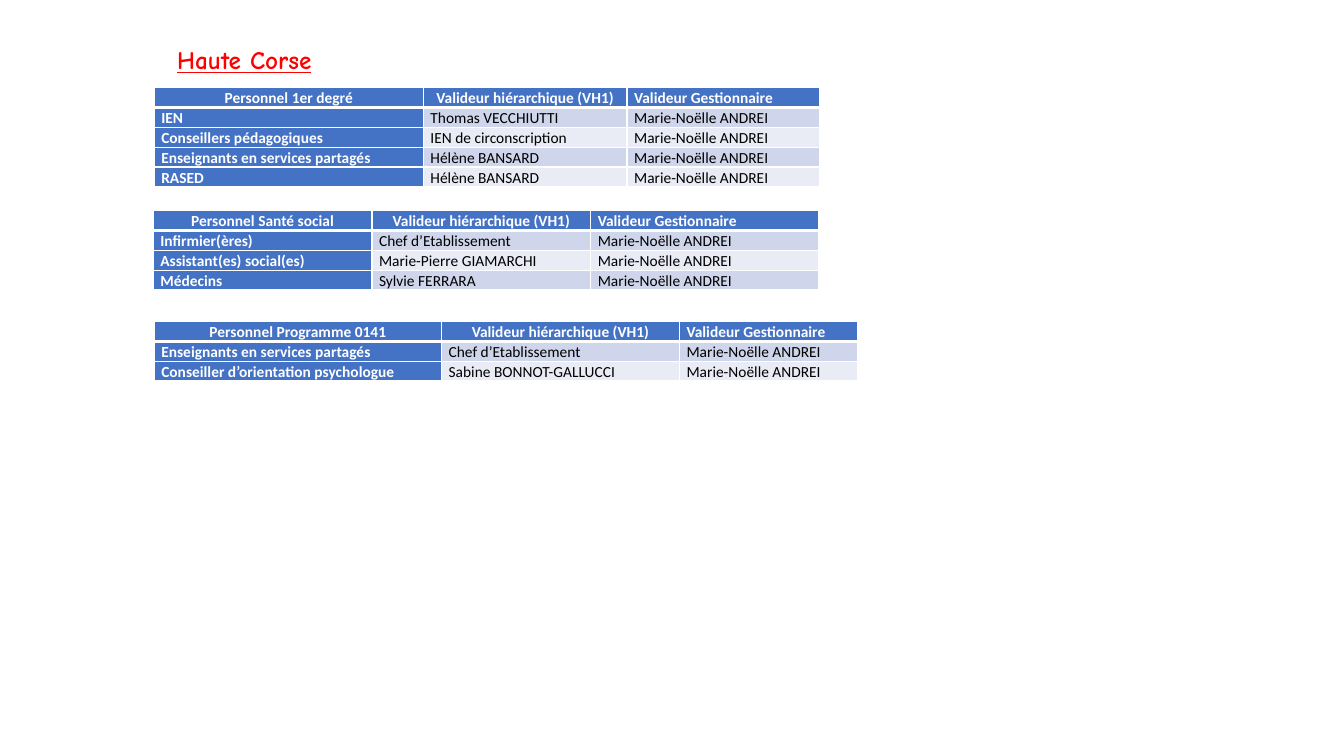
from lxml import etree
from pptx import Presentation
from pptx.dml.color import RGBColor
from pptx.enum.text import PP_ALIGN
from pptx.oxml.ns import qn
from pptx.util import Inches, Pt

CENTER, LEFT = PP_ALIGN.CENTER, PP_ALIGN.LEFT
BLUE, WHITE, BLACK, RED = "4472C4", "FFFFFF", "000000", "FF0000"
BANDS = ("CFD5EA", "E9EBF5")
ROW_HEIGHT = 0.19
LINE_SPACING = 1.07
MANAGER = "Marie-Noëlle ANDREI"

# left, top, column widths, first heading, rows of (staff, approver)
STAFF_TABLES = [
    (1.53, 0.87, (2.67, 2.02, 1.91), "Personnel 1er degré", [
        ("IEN", "Thomas VECCHIUTTI"),
        ("Conseillers pédagogiques", "IEN de circonscription"),
        ("Enseignants en services partagés", "Hélène BANSARD"),
        ("RASED", "Hélène BANSARD"),
    ]),
    (1.52, 2.09, (2.17, 2.17, 2.26), "Personnel Santé social", [
        ("Infirmier(ères)", "Chef d’Etablissement"),
        ("Assistant(es) social(es)", "Marie-Pierre GIAMARCHI"),
        ("Médecins", "Sylvie FERRARA"),
    ]),
    (1.53, 3.19, (2.85, 2.36, 1.77), "Personnel Programme 0141", [
        ("Enseignants en services partagés", "Chef d’Etablissement"),
        ("Conseiller d’orientation psychologue", "Sabine BONNOT-GALLUCCI"),
    ]),
]


def color(value):
    return RGBColor.from_string(value)


def set_font(para, name, size, value, bold, underline=False):
    font = para.font
    font.name, font.size = name, Pt(size)
    font.bold, font.underline = bold, underline
    font.color.rgb = color(value)


def set_borders(cell, widths):
    """Draw white cell borders; widths maps L, R, T and B to points, in that order."""
    properties = cell._tc.get_or_add_tcPr()
    for side, width in widths.items():
        line = etree.SubElement(properties, qn(f"a:ln{side}"), w=str(Pt(width)))
        fill = etree.SubElement(line, qn("a:solidFill"))
        etree.SubElement(fill, qn("a:srgbClr"), val=WHITE)


def fill_cell(cell, text, row, column):
    heading = row == 0
    strong = heading or column == 0
    set_borders(cell, {"L": 1, "R": 1, "T": 3 if row == 1 else 1, "B": 3 if heading else 1})
    cell.fill.solid()
    cell.fill.fore_color.rgb = color(BLUE if strong else BANDS[(row - 1) % 2])
    cell.margin_left = cell.margin_right = Inches(0.07)
    cell.margin_top = cell.margin_bottom = 0
    cell.text = text
    para = cell.text_frame.paragraphs[0]
    para.alignment = CENTER if heading and column < 2 else LEFT
    para.line_spacing = LINE_SPACING
    set_font(para, "Calibri", 11, WHITE if strong else BLACK, strong)


def add_staff_table(slide, left, top, widths, heading, staff):
    rows = [(heading, "Valideur hiérarchique (VH1)", "Valideur Gestionnaire")]
    rows += [(group, approver, MANAGER) for group, approver in staff]
    table = slide.shapes.add_table(
        len(rows), len(widths), Inches(left), Inches(top),
        Inches(sum(widths)), Inches(ROW_HEIGHT * len(rows))).table
    for column, width in zip(table.columns, widths):
        column.width = Inches(width)
    for row, texts in enumerate(rows):
        for column, text in enumerate(texts):
            fill_cell(table.cell(row, column), text, row, column)


def add_title(slide, left, top, width, height):
    box = slide.shapes.add_textbox(Inches(left), Inches(top), Inches(width), Inches(height))
    frame = box.text_frame
    frame.word_wrap = True
    para = frame.paragraphs[0]
    para.text = "Haute Corse"
    para.line_spacing = LINE_SPACING
    para.space_after = Pt(8)
    set_font(para, "Comic Neue", 18, RED, True, True)


def main():
    deck = Presentation()
    deck.slide_width, deck.slide_height = Inches(13.33), Inches(7.5)
    slide = deck.slides.add_slide(deck.slide_layouts[6])
    add_title(slide, 1.66, 0.37, 6.67, 0.85)
    for staff_table in STAFF_TABLES:
        add_staff_table(slide, *staff_table)
    deck.save("out.pptx")


if __name__ == "__main__":
    main()
